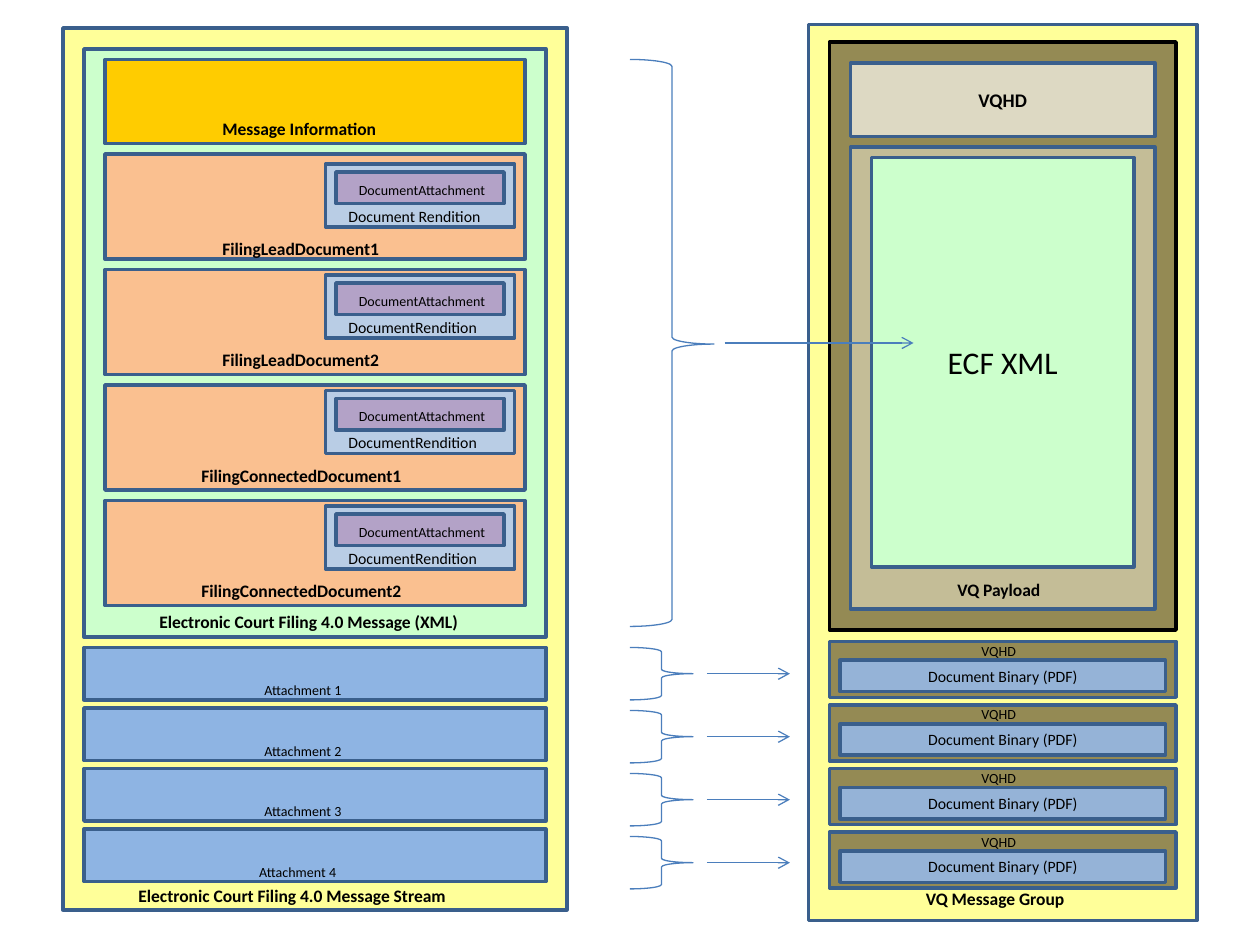
from lxml import etree
from pptx import Presentation
from pptx import util as u
from pptx.dml.color import RGBColor
from pptx.enum import shapes, text
from pptx.oxml import ns

# Content
FILES = [  # label, label left, label width, label drop, rendition, its width, its drop
    ("FilingLeadDocument1", 120, 105, 44.5, "Document Rendition", 91.5, 5.8),
    ("FilingLeadDocument2", 120, 105, 42, "DocumentRendition", 89.5, 3.2),
    ("FilingConnectedDocument1", 108, 130.5, 42, "DocumentRendition", 89.5, 3.2),
    ("FilingConnectedDocument2", 108, 130.5, 42, "DocumentRendition", 89.5, 3.2),
]
ATTACH = [("Attachment 1", 144), ("Attachment 2", 144),
          ("Attachment 3", 144), ("Attachment 4", 141)]
BINARY = "Document Binary (PDF)"
HEADER = "VQHD"

THEME = {
    "font": "Calibri", "ink": "000000", "edge": "3A5F8C", "flow": "4B7EBC",
    "outer": "FFFF99", "xml": "CCFFCC", "info": "FFCC00", "file": "FAC090",
    "rend": "B9CDE5", "doc": "B3A2C7", "att": "8EB4E3", "queue": "948A54",
    "head": "DDD9C3", "load": "C4BD97", "pdf": "95B3D7",
    "huge": 18, "big": 11, "label": 10, "small": 9, "tiny": 8,
    "thick": 2, "thin": 0.75,
}

deck = Presentation()
deck.slide_width, deck.slide_height = u.Pt(720), u.Pt(540)
page = deck.slides.add_slide(deck.slide_layouts[6]).shapes


def color(name):
    return RGBColor.from_string(THEME[name])


def write(frame, words, size="label", bold=False, align=None):
    """Put one formatted line of text in a frame."""
    para = frame.paragraphs[0]
    para.alignment = align
    run = para.add_run()
    run.text = words
    run.font.name, run.font.size = THEME["font"], u.Pt(THEME[size])
    run.font.bold, run.font.color.rgb = bold, color("ink")


def box(home, fill, x, y, w, h, words=None, edge="edge", **form):
    rect = home.add_shape(shapes.MSO_SHAPE.RECTANGLE, *map(u.Pt, (x, y, w, h)))
    rect.shadow.inherit = False
    rect.fill.solid()
    rect.fill.fore_color.rgb = color(fill)
    rect.line.color.rgb, rect.line.width = color(edge), u.Pt(THEME["thick"])
    if words:
        rect.text_frame.vertical_anchor = text.MSO_ANCHOR.MIDDLE
        write(rect.text_frame, words, align=text.PP_ALIGN.CENTER, **form)


def label(home, words, x, y, w, h=19.4, **form):
    frame = home.add_textbox(*map(u.Pt, (x, y, w, h))).text_frame
    frame.word_wrap = False
    frame.auto_size = text.MSO_AUTO_SIZE.SHAPE_TO_FIT_TEXT
    write(frame, words, **form)


def brace(home, x, y, w, h, adjust=()):
    form = home.add_shape(shapes.MSO_SHAPE.RIGHT_BRACE, *map(u.Pt, (x, y, w, h)))
    form.shadow.inherit = False
    form.fill.background()
    form.line.color.rgb, form.line.width = color("flow"), u.Pt(THEME["thin"])
    for i, part in enumerate(adjust):
        form.adjustments[i] = part


def arrow(home, x, y, end):
    line = home.add_connector(shapes.MSO_CONNECTOR.STRAIGHT,
                              *map(u.Pt, (x, y, end, y)))
    line.line.color.rgb, line.line.width = color("flow"), u.Pt(THEME["thin"])
    tip = etree.SubElement(line.line._get_or_add_ln(), ns.qn("a:tailEnd"))
    tip.set("type", "arrow")
    etree.SubElement(line._element.spPr, ns.qn("a:effectLst"))


def group():
    return page.add_group_shape().shapes


# Message stream, left
box(page, "outer", 36, 16, 288, 504)
label(page, "Electronic Court Filing 4.0 Message Stream", 72, 502, 193, bold=True)
box(page, "xml", 48, 28, 264, 336)
label(page, "Electronic Court Filing 4.0 Message (XML)", 84, 345.6, 188, bold=True)
box(page, "info", 60, 34, 240, 48)
label(page, "Message Information", 120, 64, 103.5, bold=True)

# Filing documents
for i, (name, x, w, drop, rend, wide, gap) in enumerate(FILES):
    y = 88 + 66 * i
    box(page, "file", 60, y, 240, 60)
    label(page, name, x, y + drop, w, bold=True)
    top, card = y + gap, group()
    box(card, "rend", 186, top, 108, 36)
    label(card, rend, 192, top + 20.6, wide, 18, size="small")
    box(card, "doc", 192, top + 4.5, 96, 18)
    label(card, "DocumentAttachment", 198, top + 6.3, 88, 17, size="tiny")

# Attachments
for i, (name, x) in enumerate(ATTACH):
    y = 370 + 34.6 * i
    box(page, "att", 48, y, 264, 30)
    label(page, name, x, y + 16, 59, 17, size="tiny")

# Message group, right
box(page, "outer", 462, 14, 222, 512)
label(page, "VQ Message Group", 522, 504, 98, bold=True)
main = group()
box(main, "queue", 474, 24, 198, 336, edge="ink")
box(main, "head", 486, 36, 174, 42, HEADER, size="big", bold=True)
box(main, "load", 486, 84, 174, 264)
box(main, "xml", 498, 90, 150, 234, "ECF XML", size="huge")
label(page, "VQ Payload", 540, 327.6, 66, bold=True)

# XML to payload
brace(page, 360, 34, 48, 324, (0.083, 0.502))
arrow(page, 414, 196, 522)

# Attachments to binaries
for i in range(len(ATTACH)):
    y, unit = 366.5 + 36.3 * i, group()
    box(unit, "queue", 474, y, 198, 32)
    box(unit, "pdf", 480, y + 10.8, 186, 18, BINARY, size="small")
    label(unit, HEADER, 553.7, y - 2.9, 39, 17, size="tiny")
    y, flow = 370 + 36 * i, group()
    brace(flow, 360, y, 36, 30)
    arrow(flow, 404, y + 15, 451.4)

deck.save("out.pptx")
